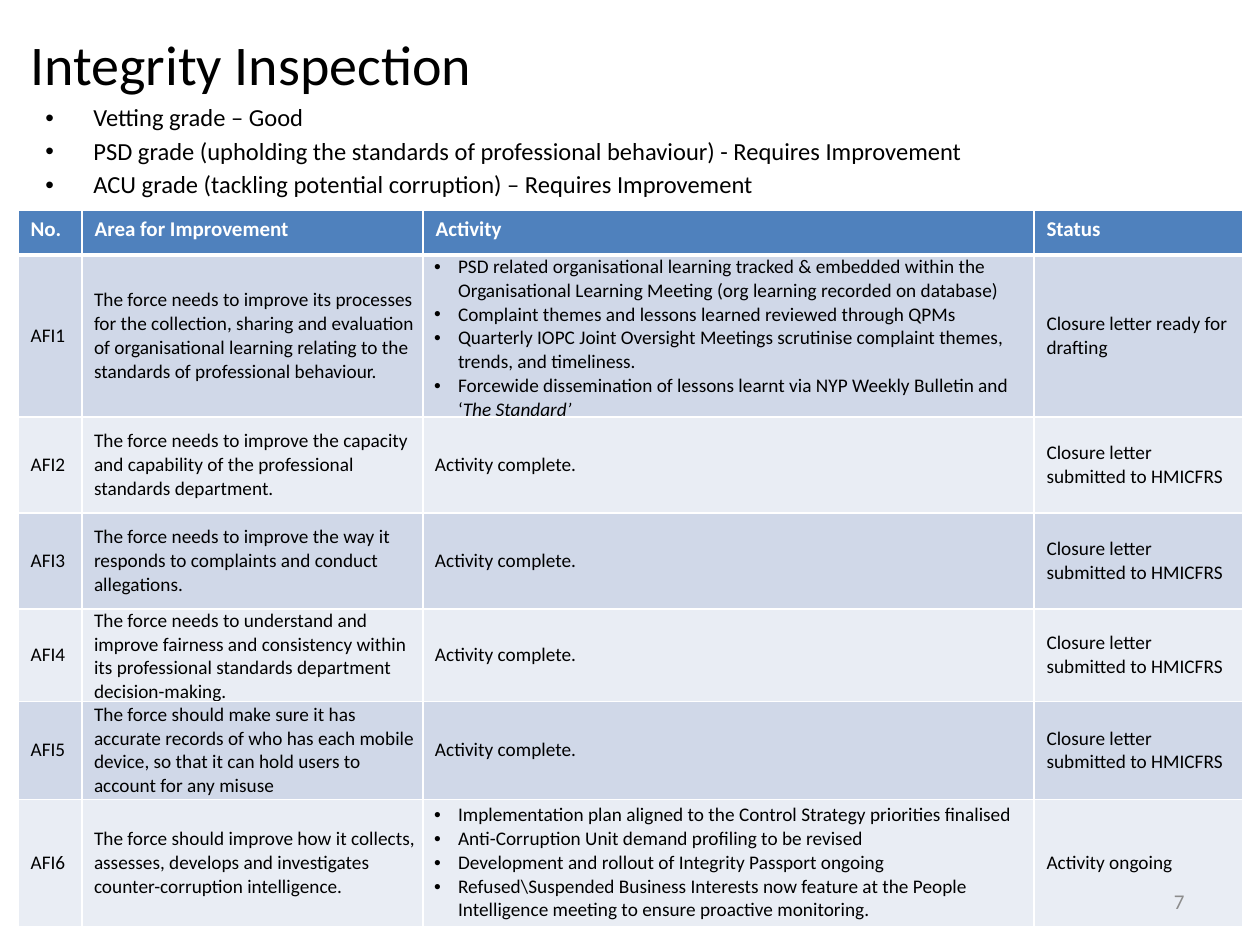
"""Build the Integrity Inspection slide."""
from dataclasses import dataclass

import pptx
import pptx.dml.color
import pptx.enum.text
import pptx.oxml
import pptx.oxml.ns
import pptx.util

PX_PER_INCH = 126
ANCHOR = pptx.enum.text.MSO_ANCHOR
ALIGN = pptx.enum.text.PP_ALIGN


@dataclass(frozen=True)
class Theme:
    """Colours and type sizes of the slide."""
    font: str = "Calibri"
    text: str = "000000"
    muted: str = "8C8C8C"
    white: str = "FFFFFF"
    header: str = "4F81BD"
    bands: tuple = ("D0D8E8", "E9EDF4")
    title_size: int = 32
    grade_size: int = 14
    header_size: int = 12
    body_size: int = 11
    number_size: int = 12


THEME = Theme()

GRADES = [
    "Vetting grade – Good",
    "PSD grade (upholding the standards of professional behaviour) - Requires Improvement",
    "ACU grade (tackling potential corruption) – Requires Improvement",
]
COLUMN_WIDTHS = [64, 341, 611, 209]
ROW_HEIGHTS = [45, 149, 96, 96, 76, 98, 127]
HEADINGS = ["No.", "Area for Improvement", "Activity", "Status"]
COMPLETE = "Activity complete."
SUBMITTED = "Closure letter submitted to HMICFRS"
IMPROVEMENTS = [
    ("The force needs to improve its processes for the collection, sharing and evaluation of "
     "organisational learning relating to the standards of professional behaviour.",
     [["PSD related organisational learning tracked & embedded within the "
       "Organisational Learning Meeting (org learning recorded on database)"],
      ["Complaint themes and lessons learned reviewed through QPMs"],
      ["Quarterly IOPC Joint Oversight Meetings scrutinise complaint themes, trends, "
       "and timeliness."],
      ["Forcewide dissemination of lessons learnt via NYP Weekly Bulletin and ‘",
       "The Standard’"]],
     "Closure letter ready for drafting"),
    ("The force needs to improve the capacity and capability of the professional standards "
     "department.", COMPLETE, SUBMITTED),
    ("The force needs to improve the way it responds to complaints and conduct allegations.",
     COMPLETE, SUBMITTED),
    ("The force needs to understand and improve fairness and consistency within its "
     "professional standards department decision-making.", COMPLETE, SUBMITTED),
    ("The force should make sure it has accurate records of who has each mobile device, so "
     "that it can hold users to account for any misuse", COMPLETE, SUBMITTED),
    ("The force should improve how it collects, assesses, develops and investigates "
     "counter-corruption intelligence.",
     [["Implementation plan aligned to the Control Strategy priorities finalised"],
      ["Anti-Corruption Unit demand profiling to be revised"],
      ["Development and rollout of Integrity Passport ongoing"],
      ["Refused\\Suspended Business Interests now feature at the People Intelligence "
       "meeting to ensure proactive monitoring."]],
     "Activity ongoing"),
]


def px(length):
    """Turn pixels into EMU."""
    return pptx.util.Emu(round(length * 914400 / PX_PER_INCH))


def rgb(value):
    """Turn a hex string into a colour."""
    return pptx.dml.color.RGBColor.from_string(value)


def add_run(paragraph, text, size, color=THEME.text, bold=False, italic=False):
    """Add one formatted run to a paragraph."""
    run = paragraph.add_run()
    run.text = text
    font = run.font
    font.name, font.size = THEME.font, pptx.util.Pt(size)
    font.bold, font.italic = bold, italic
    font.color.rgb = rgb(color)


def next_paragraph(frame, index):
    """Return the first paragraph of a frame or add a further one."""
    return frame.paragraphs[0] if index == 0 else frame.add_paragraph()


def set_indent(paragraph, left, first=0, bullet=False):
    """Set the indents of a paragraph and its optional bullet."""
    properties = paragraph._p.get_or_add_pPr()
    properties.set("marL", str(px(left)))
    properties.set("indent", str(px(first)))
    if bullet:
        namespace = pptx.oxml.ns.nsdecls("a")
        for tag in ('buFont %s typeface="Arial"', 'buChar %s char="•"'):
            properties.append(pptx.oxml.parse_xml(f"<a:{tag % namespace}/>"))


def add_text_box(slide, left, top, width, height, anchor=ANCHOR.TOP):
    """Add a wrapping text box and return its text frame."""
    frame = slide.shapes.add_textbox(px(left), px(top), px(width), px(height)).text_frame
    frame.word_wrap = True
    frame.vertical_anchor = anchor
    return frame


def add_grades(slide):
    """Add the bulleted list of grades."""
    frame = add_text_box(slide, 18, 98, 1134, 112)
    for index, grade in enumerate(GRADES):
        paragraph = next_paragraph(frame, index)
        paragraph.line_spacing = 0.97
        if index:
            paragraph.space_before = pptx.util.Pt(THEME.grade_size * 0.2)
        set_indent(paragraph, 63, -48, bullet=True)
        add_run(paragraph, grade, THEME.grade_size)


def style_cell(cell, fill, bottom=1):
    """Fill a cell and give it white borders."""
    cell.fill.solid()
    cell.fill.fore_color.rgb = rgb(fill)
    properties = cell._tc.get_or_add_tcPr()
    for index, (side, width) in enumerate(zip("LRTB", (1, 1, 1, bottom))):
        properties.insert(index, pptx.oxml.parse_xml(
            f'<a:ln{side} {pptx.oxml.ns.nsdecls("a")} w="{pptx.util.Pt(width)}"><a:solidFill>'
            f'<a:srgbClr val="{THEME.white}"/></a:solidFill></a:ln{side}>'))


def fill_body_cell(cell, content, flush):
    """Write plain text or a bulleted list into a body cell."""
    cell.vertical_anchor = ANCHOR.MIDDLE
    if flush:
        cell.margin_left = cell.margin_right = cell.margin_top = cell.margin_bottom = 0
    bulleted = isinstance(content, list)
    for index, pieces in enumerate(content if bulleted else [[content]]):
        paragraph = next_paragraph(cell.text_frame, index)
        if bulleted:
            set_indent(paragraph, 35, -24, bullet=True)
        elif flush:
            set_indent(paragraph, 12)
        for position, piece in enumerate(pieces):
            add_run(paragraph, piece, THEME.body_size, italic=position > 0)


def add_improvement_table(slide):
    """Add the table of areas for improvement."""
    table = slide.shapes.add_table(
        len(ROW_HEIGHTS), len(COLUMN_WIDTHS), px(18), px(210),
        px(sum(COLUMN_WIDTHS)), px(sum(ROW_HEIGHTS))).table
    for column, width in zip(table.columns, COLUMN_WIDTHS):
        column.width = px(width)
    for row, height in zip(table.rows, ROW_HEIGHTS):
        row.height = px(height)
    for cell, heading in zip(table.rows[0].cells, HEADINGS):
        style_cell(cell, THEME.header, bottom=3)
        add_run(cell.text_frame.paragraphs[0], heading, THEME.header_size, THEME.white, bold=True)
    for number, improvement in enumerate(IMPROVEMENTS, start=1):
        contents = (f"AFI{number}", *improvement)
        for column, content in enumerate(contents):
            cell = table.cell(number, column)
            style_cell(cell, THEME.bands[(number - 1) % 2], bottom=1)
            fill_body_cell(cell, content, flush=column in (1, 2))


def main():
    """Build and save the slide."""
    presentation = pptx.Presentation()
    presentation.slide_width, presentation.slide_height = px(1260), px(945)
    slide = presentation.slides.add_slide(presentation.slide_layouts[6])
    title = add_text_box(slide, 18, 14, 997, 98, ANCHOR.MIDDLE)
    add_run(title.paragraphs[0], "Integrity Inspection", THEME.title_size)
    add_improvement_table(slide)
    add_grades(slide)
    number = add_text_box(slide, 903, 876, 294, 50, ANCHOR.MIDDLE).paragraphs[0]
    number.alignment = ALIGN.RIGHT
    add_run(number, "7", THEME.number_size, THEME.muted)
    presentation.save("out.pptx")


if __name__ == "__main__":
    main()
